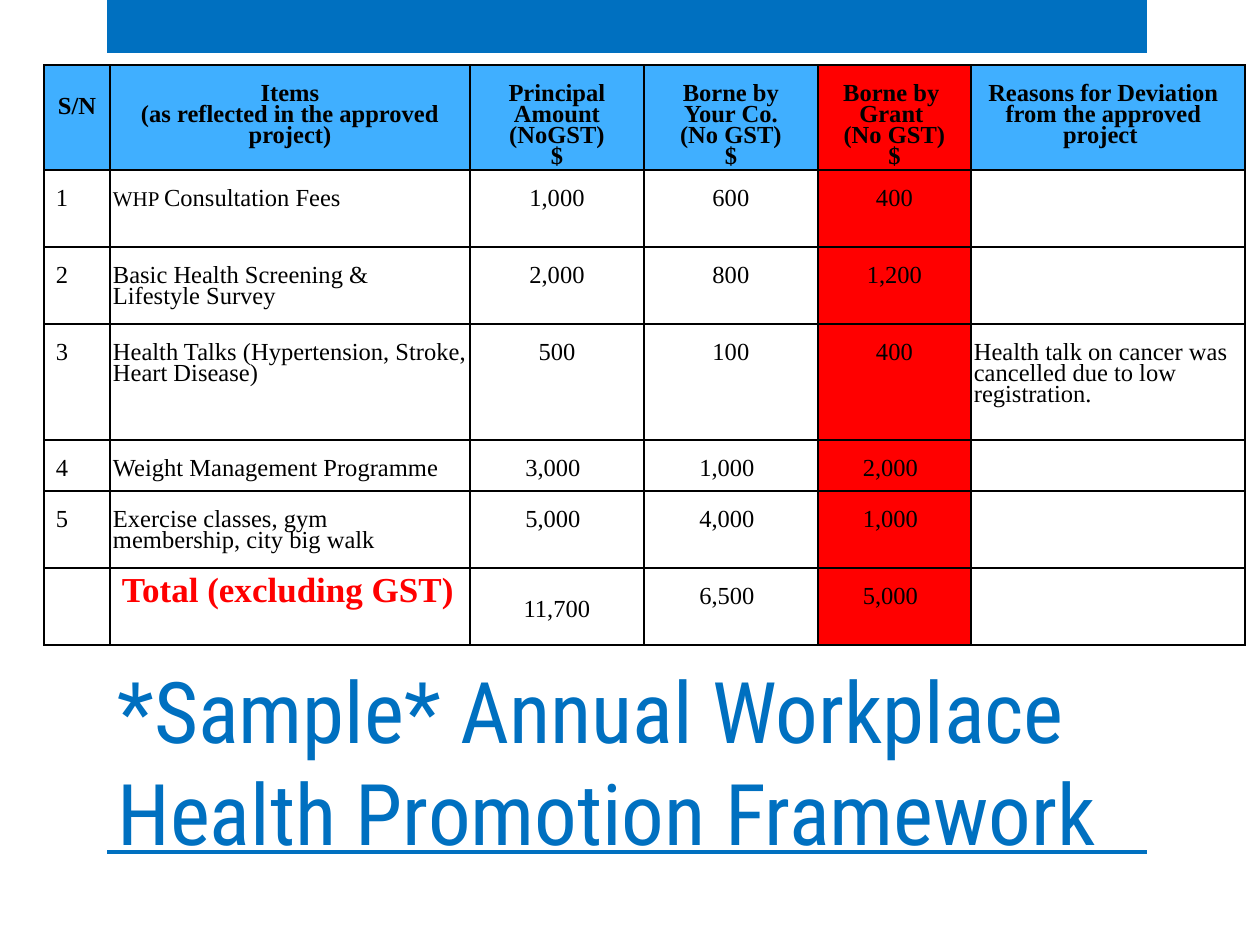
from lxml.etree import SubElement
from pptx import Presentation
from pptx.dml.color import RGBColor
from pptx.enum.shapes import MSO_SHAPE as Shape
from pptx.enum.text import MSO_ANCHOR as Anchor, PP_ALIGN as Align
from pptx.oxml.ns import qn
from pptx.util import Pt

PX = 9144000 // 1260  # one px is 1/126 inch

BLUE = RGBColor(0x00, 0x70, 0xC0)
HEADER_BLUE = RGBColor(0x40, 0xAF, 0xFF)
RED = RGBColor(0xFF, 0x00, 0x00)
BLACK = RGBColor(0x00, 0x00, 0x00)

TITLE = "*Sample* Annual Workplace Health Promotion Framework"
TITLE_FONT = "Roboto Condensed"
TABLE_FONT = "Times New Roman"

COLUMN_WIDTHS = [66, 360, 174, 174, 153, 274]
ROW_HEIGHTS = [105, 77, 77, 116, 51, 77, 77]
ITEMS, PRINCIPAL, GRANT, REASONS = 1, 2, 4, 5
FEES_ROW, TALKS_ROW, TOTAL_ROW = 1, 3, 6

ROWS = [
    ["S/N", "Items\n(as reflected in the approved project)",
     "Principal Amount (NoGST)\n$", "Borne by Your Co.\n(No GST)\n$",
     "Borne by \nGrant \n(No GST)\n$",
     "Reasons for Deviation from the approved project "],
    ["1", "WHP ", "1,000", "600", "400", ""],
    ["2", "Basic Health Screening & Lifestyle Survey", "2,000", "800", "1,200", ""],
    ["3", "Health Talks (Hypertension, Stroke, Heart Disease)", "500", "100", "400",
     "Health talk on cancer was cancelled due to low registration."],
    ["4", "Weight Management Programme", "3,000", "1,000", "2,000", ""],
    ["5", "Exercise classes, gym membership, city big walk", "5,000", "4,000", "1,000", ""],
    ["", "Total (excluding GST)", "11,700", "6,500", "5,000", ""],
]


def px(*lengths):
    return [length * PX for length in lengths]


def style_run(run, size, color=BLACK, bold=False, font=TABLE_FONT):
    run.font.name = font
    run.font.size = Pt(size)
    run.font.bold = bold
    run.font.color.rgb = color


def add_bar(slide, *box):
    bar = slide.shapes.add_shape(Shape.RECTANGLE, *px(*box))
    bar.shadow.inherit = False
    bar.fill.solid()
    bar.fill.fore_color.rgb = BLUE
    bar.line.fill.background()


def add_title(slide):
    frame = slide.shapes.add_textbox(*px(105, 649, 1140, 220)).text_frame
    frame.word_wrap = True
    frame.vertical_anchor = Anchor.BOTTOM
    frame.text = TITLE
    style_run(frame.paragraphs[0].runs[0], 48.6, BLUE, font=TITLE_FONT)


def add_borders(cell):
    properties = cell._tc.get_or_add_tcPr()
    for side in ("a:lnL", "a:lnR", "a:lnT", "a:lnB"):
        line = SubElement(properties, qn(side), w=str(Pt(1)))
        fill = SubElement(line, qn("a:solidFill"))
        SubElement(fill, qn("a:srgbClr"), val=str(BLACK))


def paint_cell(cell, row, column):
    if column == GRANT or row == 0:
        cell.fill.solid()
        cell.fill.fore_color.rgb = RED if column == GRANT else HEADER_BLUE
    else:
        cell.fill.background()


def left_indent(row, column):
    if column == REASONS or (column == ITEMS and 0 < row < TOTAL_ROW):
        return 0
    return 1 if row > 3 and column >= PRINCIPAL else 9


def right_indent(row, column):
    return 0 if row == TALKS_ROW and column in (ITEMS, REASONS) else 9


def write_cell(cell, row, column, text):
    single_spaced = (row, column) in ((0, 0), (TOTAL_ROW, PRINCIPAL))
    is_total = (row, column) == (TOTAL_ROW, ITEMS)
    centred = row == 0 or PRINCIPAL <= column <= GRANT
    cell.margin_left = cell.margin_right = 3 * PX
    cell.margin_top = (28 if single_spaced else 21) * PX
    cell.margin_bottom = 0
    cell.text_frame.text = text
    for paragraph in cell.text_frame.paragraphs:
        paragraph.alignment = Align.CENTER if centred else Align.LEFT
        if not single_spaced:
            paragraph.line_spacing = Pt(12)
            properties = paragraph._p.get_or_add_pPr()
            properties.set("marL", str(left_indent(row, column) * PX))
            properties.set("marR", str(right_indent(row, column) * PX))
        for run in paragraph.runs:
            style_run(run, 20 if is_total else 14, RED if is_total else BLACK,
                      bold=is_total or row == 0)


def add_cost_table(slide):
    left, top = 44, 65
    table = slide.shapes.add_table(
        len(ROW_HEIGHTS), len(COLUMN_WIDTHS),
        *px(left, top, sum(COLUMN_WIDTHS), sum(ROW_HEIGHTS))).table
    table.first_row = table.horz_banding = False
    for column, width in zip(table.columns, COLUMN_WIDTHS):
        column.width = width * PX
    for row, height in zip(table.rows, ROW_HEIGHTS):
        row.height = height * PX

    for row, texts in enumerate(ROWS):
        for column, text in enumerate(texts):
            cell = table.cell(row, column)
            add_borders(cell)
            paint_cell(cell, row, column)
            if text:
                write_cell(cell, row, column, text)

    # The fees item has a smaller first word
    fees = table.cell(FEES_ROW, ITEMS).text_frame.paragraphs[0]
    style_run(fees.runs[0], 12)
    consultation = fees.add_run()
    consultation.text = "Consultation Fees"
    style_run(consultation, 14)


def main():
    deck = Presentation()
    deck.slide_width, deck.slide_height = px(1260, 945)
    slide = deck.slides.add_slide(deck.slide_layouts[6])

    # Top band and rule under the title
    add_bar(slide, 107, 0, 1040, 53)
    add_bar(slide, 107, 850, 1040, 4)

    add_title(slide)
    add_cost_table(slide)
    deck.save("out.pptx")


if __name__ == "__main__":
    main()
